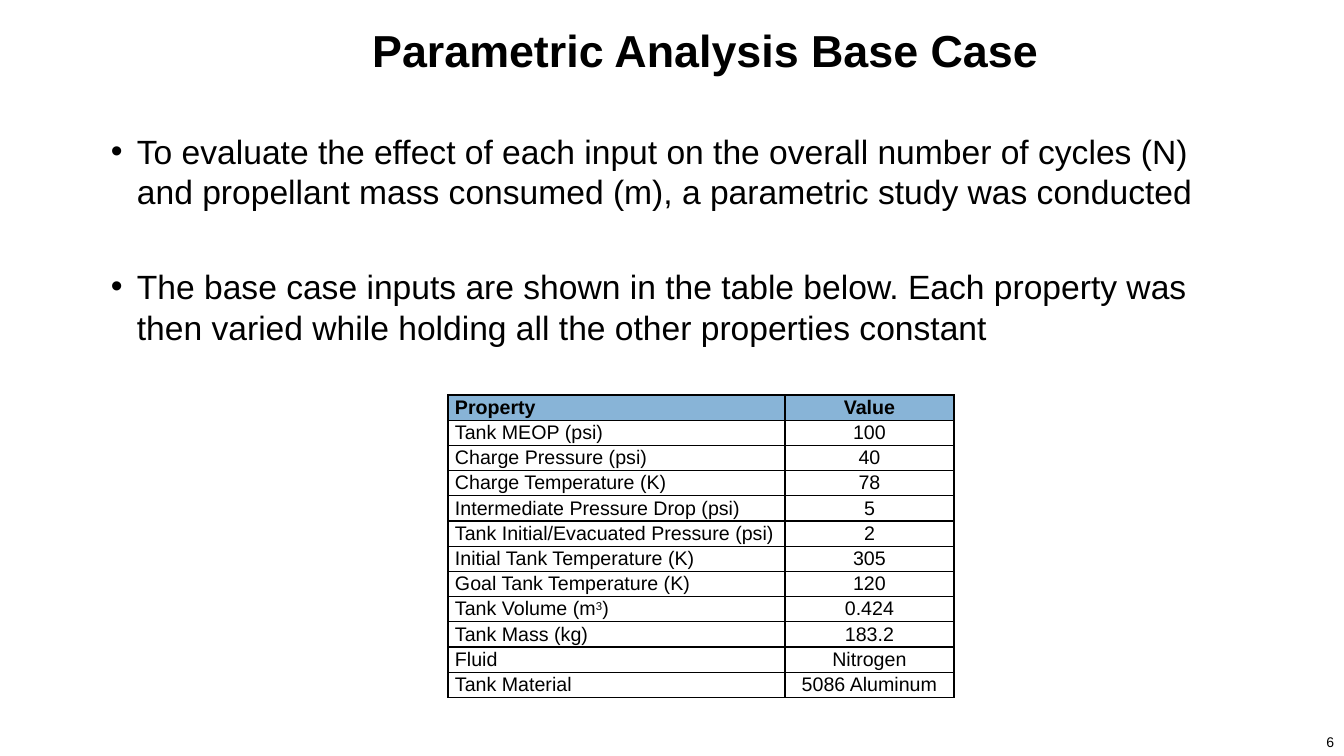
import pptx
import pptx.dml.color
import pptx.enum.text
import pptx.oxml
import pptx.oxml.ns
import pptx.util

ALIGN = pptx.enum.text.PP_ALIGN
ANCHOR = pptx.enum.text.MSO_ANCHOR
COLORS = {"text": "000000", "header": "88B4D7", "border": "000000"}
NS = pptx.oxml.ns.nsdecls("a")
EMU_PER_PX = 914400 / 100.8


def px(length):
    return pptx.util.Emu(round(length * EMU_PER_PX))


class Deck:
    font_name = "Arial"

    def __init__(self, width, height):
        self.presentation = pptx.Presentation()
        self.presentation.slide_width = px(width)
        self.presentation.slide_height = px(height)
        self.slide = self.presentation.slides.add_slide(self.presentation.slide_layouts[6])

    def style(self, paragraph, size, bold=False, align=ALIGN.LEFT):
        paragraph.alignment = align
        for run in paragraph.runs:
            run.font.name = self.font_name
            run.font.size = pptx.util.Pt(size)
            run.font.bold = bold
            run.font.color.rgb = pptx.dml.color.RGBColor.from_string(COLORS["text"])

    def text(self, box, paragraphs, size, bold=False, align=ALIGN.LEFT,
             anchor=ANCHOR.TOP, bullet_indent=0, gap=0):
        frame = self.slide.shapes.add_textbox(*map(px, box)).text_frame
        frame.word_wrap = True
        frame.vertical_anchor = anchor
        frame.text = "\n".join(paragraphs)
        for index, paragraph in enumerate(frame.paragraphs):
            if bullet_indent:
                self.bullet(paragraph, bullet_indent)
            if index:
                paragraph.space_before = pptx.util.Pt(gap)
            self.style(paragraph, size, bold, align)

    def bullet(self, paragraph, indent):
        properties = paragraph._p.get_or_add_pPr()
        properties.set("marL", str(px(indent)))
        properties.set("indent", str(-px(indent)))
        properties.append(pptx.oxml.parse_xml(f'<a:buFont {NS} typeface="{self.font_name}"/>'))
        properties.append(pptx.oxml.parse_xml(f'<a:buChar {NS} char="•"/>'))

    def borders(self, cell):
        properties = cell._tc.get_or_add_tcPr()
        for side in ("lnL", "lnR", "lnT", "lnB"):
            properties.append(pptx.oxml.parse_xml(
                f'<a:{side} {NS} w="12700"><a:solidFill>'
                f'<a:srgbClr val="{COLORS["border"]}"/></a:solidFill></a:{side}>'))

    def cell(self, cell, content, header, align):
        cell.margin_left = cell.margin_right = px(7)
        cell.margin_top = cell.margin_bottom = 0
        self.borders(cell)
        if header:
            cell.fill.solid()
            cell.fill.fore_color.rgb = pptx.dml.color.RGBColor.from_string(COLORS["header"])
        else:
            cell.fill.background()
        paragraph = cell.text_frame.paragraphs[0]
        # Text between carets is superscript
        for index, part in enumerate(content.split("^")):
            run = paragraph.add_run()
            run.text = part
            if index % 2:
                run._r.get_or_add_rPr().set("baseline", "30000")
        paragraph.line_spacing = 1.07
        self.style(paragraph, 14, header, align)

    def table(self, left, top, widths, row_height, rows):
        table = self.slide.shapes.add_table(
            len(rows), len(widths), px(left), px(top),
            px(sum(widths)), px(row_height * len(rows))).table
        table.first_row = table.horz_banding = False
        for column, width in zip(table.columns, widths):
            column.width = px(width)
        for row_index, row in enumerate(rows):
            for column_index, content in enumerate(row):
                align = ALIGN.CENTER if column_index else ALIGN.LEFT
                self.cell(table.cell(row_index, column_index), content, row_index == 0, align)


def main():
    deck = Deck(1344, 756)

    # Title
    deck.text((168, 25, 1075, 50), ["Parametric Analysis Base Case"], 32,
              bold=True, align=ALIGN.CENTER, anchor=ANCHOR.MIDDLE)

    # Purpose of the study
    deck.text((101, 126, 1142, 613), [
        "To evaluate the effect of each input on the overall number of cycles (N) "
        "and propellant mass consumed (m), a parametric study was conducted",
        "The base case inputs are shown in the table below. Each property was "
        "then varied while holding all the other properties constant",
    ], 24, bullet_indent=26, gap=39)

    # Page number
    deck.text((1277, 729, 67, 27), ["6"], 10, align=ALIGN.RIGHT)

    # Base case inputs
    deck.table(448, 395, (337, 169), 21, [
        ("Property", "Value"),
        ("Tank MEOP (psi)", "100"),
        ("Charge Pressure (psi)", "40"),
        ("Charge Temperature (K)", "78"),
        ("Intermediate Pressure Drop (psi)", "5"),
        ("Tank Initial/Evacuated Pressure (psi)", "2"),
        ("Initial Tank Temperature (K)", "305"),
        ("Goal Tank Temperature (K)", "120"),
        ("Tank Volume (m^3^)", "0.424"),
        ("Tank Mass (kg)", "183.2"),
        ("Fluid", "Nitrogen"),
        ("Tank Material", "5086 Aluminum"),
    ])

    deck.presentation.save("out.pptx")


if __name__ == "__main__":
    main()
